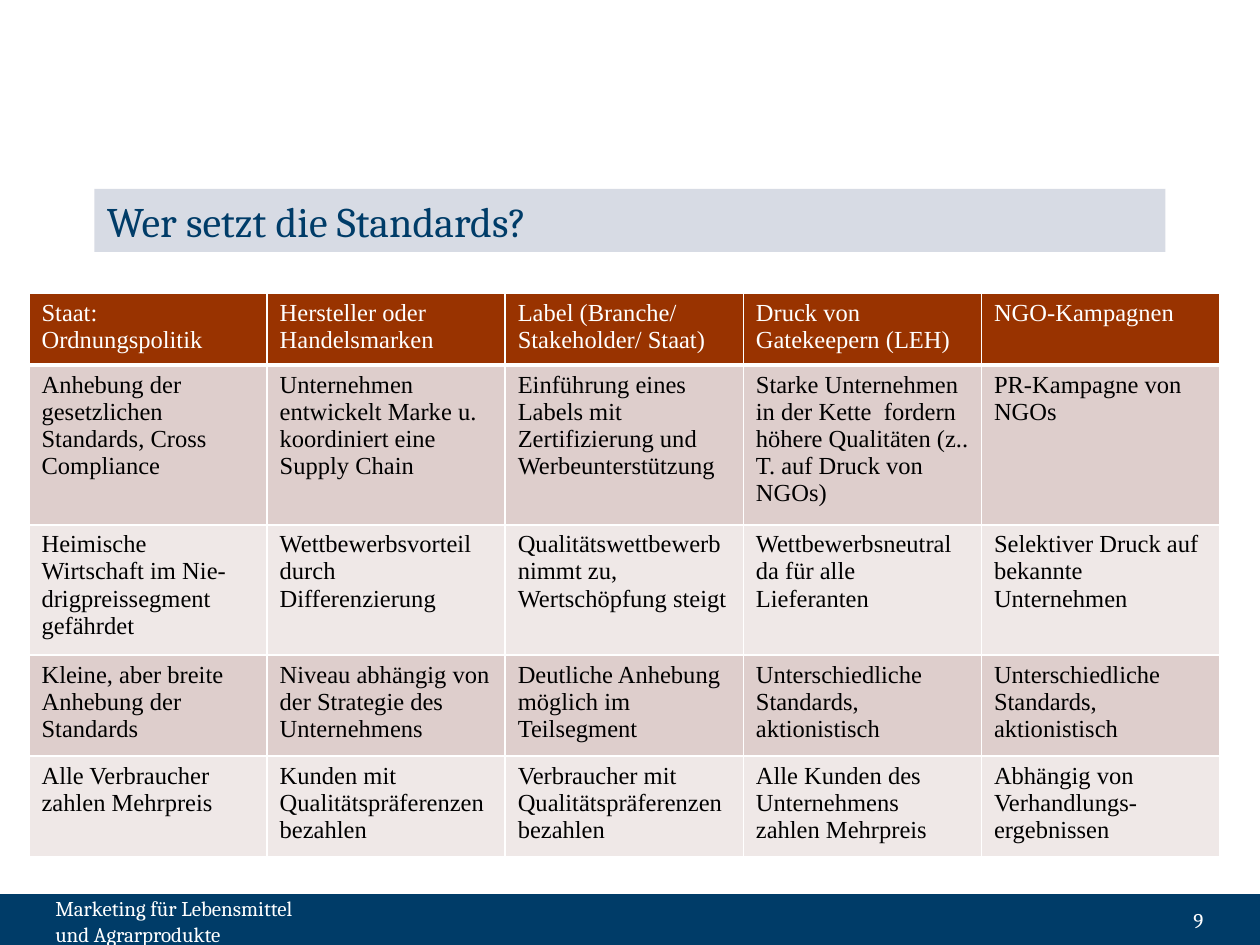
from dataclasses import dataclass

from lxml.etree import SubElement
from pptx import Presentation
from pptx.dml.color import RGBColor
from pptx.enum.shapes import MSO_SHAPE
from pptx.enum.text import MSO_ANCHOR, PP_ALIGN
from pptx.oxml.ns import qn
from pptx.util import Inches, Pt


@dataclass(frozen=True)
class Theme:
    navy: str = "003C68"
    title_band: str = "B0B8CA"
    white: str = "FFFFFF"
    black: str = "000000"
    header: str = "993300"
    bands: tuple = ("DECECC", "EFE8E7")
    heading_font: str = "Cambria"
    table_font: str = "Times New Roman"
    title_size: int = 24
    table_size: int = 14
    footer_size: int = 12


THEME = Theme()
SLIDE_WIDTH, SLIDE_HEIGHT = Inches(10), Inches(7.5)
GRID_COLUMNS, GRID_ROWS = 100, 75

ROW_HEIGHTS = (5.3, 11.7, 9.6, 7.5, 7.5)
STANDARDS = (
    ("Staat: Ordnungspolitik", "Hersteller oder Handelsmarken",
     "Label (Branche/ Stakeholder/ Staat)", "Druck von Gatekeepern (LEH)",
     "NGO-Kampagnen"),
    ("Anhebung der gesetzlichen Standards, Cross Compliance",
     "Unternehmen entwickelt Marke u. koordiniert eine Supply Chain",
     "Einführung eines Labels mit Zertifizierung und Werbeunterstützung",
     "Starke Unternehmen in der Kette  fordern höhere Qualitäten "
     "(z.. T. auf Druck von NGOs)",
     "PR-Kampagne von NGOs"),
    ("Heimische Wirtschaft im Nie-drigpreissegment gefährdet",
     "Wettbewerbsvorteil durch Differenzierung",
     "Qualitätswettbewerb nimmt zu, Wertschöpfung steigt",
     "Wettbewerbsneutral da für alle Lieferanten",
     "Selektiver Druck auf bekannte Unternehmen"),
    ("Kleine, aber breite Anhebung der Standards",
     "Niveau abhängig von der Strategie des Unternehmens",
     "Deutliche Anhebung möglich im Teilsegment",
     "Unterschiedliche Standards, aktionistisch",
     "Unterschiedliche Standards, aktionistisch"),
    ("Alle Verbraucher zahlen Mehrpreis",
     "Kunden mit Qualitätspräferenzen bezahlen",
     "Verbraucher mit Qualitätspräferenzen bezahlen",
     "Alle Kunden des Unternehmens zahlen Mehrpreis",
     "Abhängig von Verhandlungs-ergebnissen"),
)


def across(columns):
    return round(SLIDE_WIDTH * columns / GRID_COLUMNS)


def down(rows):
    return round(SLIDE_HEIGHT * rows / GRID_ROWS)


def place(left, top, width, height):
    """Turn grid columns and rows into slide lengths."""
    return across(left), down(top), across(width), down(height)


def set_text(text_frame, text, font_name, size, color, alignment=PP_ALIGN.LEFT):
    text_frame.text = text
    text_frame.word_wrap = True
    for paragraph in text_frame.paragraphs:
        paragraph.alignment = alignment
        for run in paragraph.runs:
            run.font.name = font_name
            run.font.size = Pt(size)
            run.font.color.rgb = RGBColor.from_string(color)


def add_band(slide, area, fill, opacity=100, line_width=0):
    shape = slide.shapes.add_shape(MSO_SHAPE.RECTANGLE, *place(*area))
    shape.shadow.inherit = False
    shape.fill.solid()
    shape.fill.fore_color.rgb = RGBColor.from_string(fill)
    if opacity < 100:
        color = shape.fill._xPr.find(f".//{qn('a:srgbClr')}")
        SubElement(color, qn("a:alpha"), val=str(opacity * 1000))
    if line_width:
        shape.line.color.rgb = RGBColor.from_string(fill)
        shape.line.width = Pt(line_width)
    else:
        shape.line.fill.background()
    return shape


def add_footer_text(slide, area, text, alignment=PP_ALIGN.LEFT):
    text_frame = slide.shapes.add_textbox(*place(*area)).text_frame
    text_frame.vertical_anchor = MSO_ANCHOR.MIDDLE
    set_text(text_frame, text, THEME.heading_font, THEME.footer_size,
             THEME.white, alignment)


def add_cell_borders(cell, bottom_width):
    properties = cell._tc.get_or_add_tcPr()
    widths = {"a:lnL": 1, "a:lnR": 1, "a:lnT": 1, "a:lnB": bottom_width}
    for side, width in widths.items():
        border = SubElement(properties, qn(side), w=str(Pt(width)))
        fill = SubElement(border, qn("a:solidFill"))
        SubElement(fill, qn("a:srgbClr"), val=THEME.white)


def add_standards_table(slide, left, top, width):
    column_count = len(STANDARDS[0])
    area = place(left, top, width, sum(ROW_HEIGHTS))
    table = slide.shapes.add_table(len(STANDARDS), column_count, *area).table
    for column in table.columns:
        column.width = across(width / column_count)
    for row_index, texts in enumerate(STANDARDS):
        is_header = row_index == 0
        fill = THEME.header if is_header else THEME.bands[(row_index - 1) % 2]
        table.rows[row_index].height = down(ROW_HEIGHTS[row_index])
        for column_index, text in enumerate(texts):
            cell = table.cell(row_index, column_index)
            set_text(cell.text_frame, text, THEME.table_font, THEME.table_size,
                     THEME.white if is_header else THEME.black)
            add_cell_borders(cell, bottom_width=3 if is_header else 1)
            cell.fill.solid()
            cell.fill.fore_color.rgb = RGBColor.from_string(fill)


def main():
    presentation = Presentation()
    presentation.slide_width = SLIDE_WIDTH
    presentation.slide_height = SLIDE_HEIGHT
    slide = presentation.slides.add_slide(presentation.slide_layouts[6])

    add_band(slide, (0, 71.1, 100, 3.9), THEME.navy, line_width=2)
    add_footer_text(slide, (3.4, 71.2, 30.8, 3.8),
                    "Marketing für Lebensmittel\nund Agrarprodukte")
    title = add_band(slide, (7.5, 15, 85, 5), THEME.title_band, opacity=50)
    title.text_frame.vertical_anchor = MSO_ANCHOR.TOP
    set_text(title.text_frame, "Wer setzt die Standards?", THEME.heading_font,
             THEME.title_size, THEME.navy)
    add_footer_text(slide, (73.2, 71, 23.3, 4), "9", PP_ALIGN.RIGHT)
    add_standards_table(slide, left=2.3, top=23.3, width=94.5)

    presentation.save("out.pptx")


if __name__ == "__main__":
    main()
